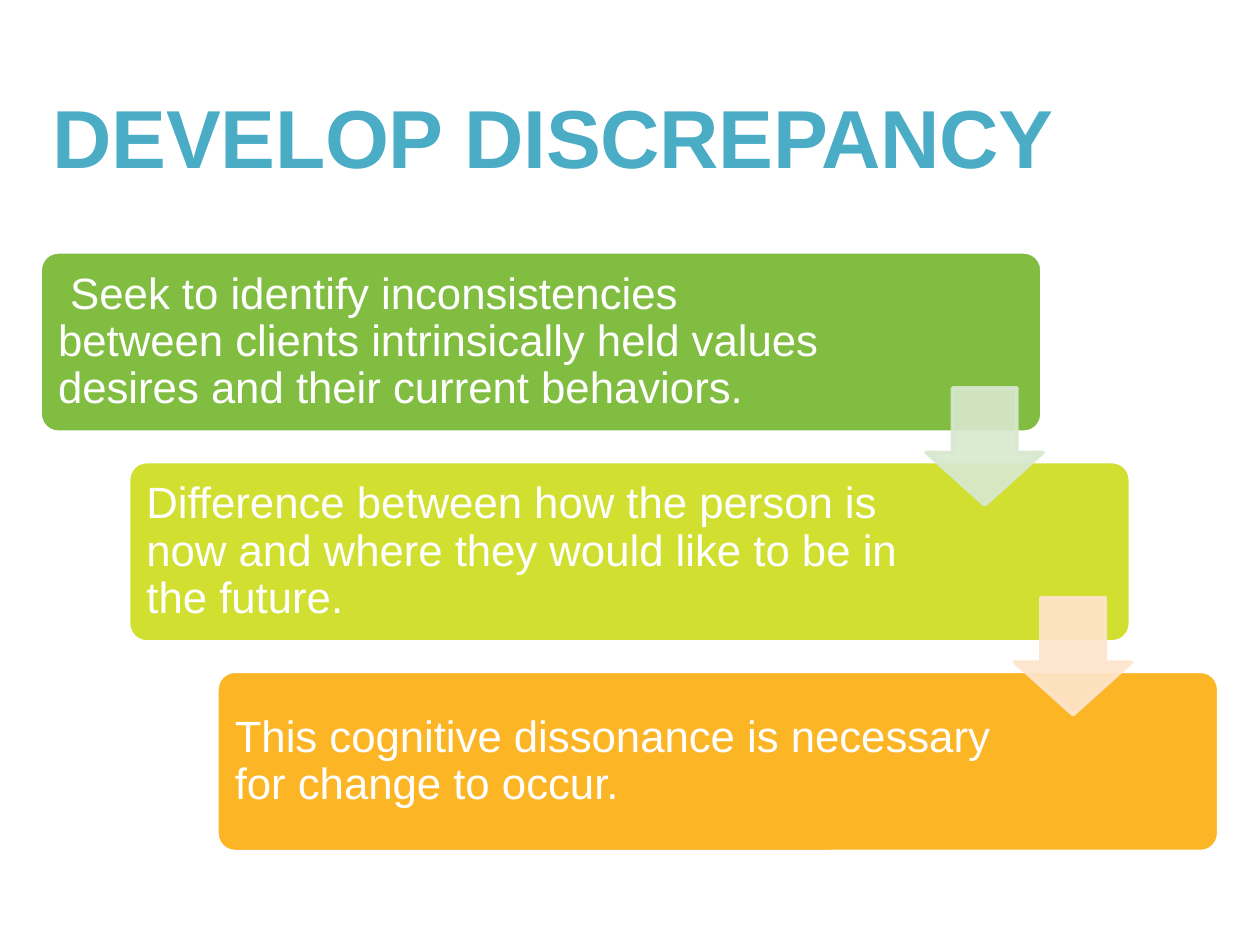
from lxml import etree
from pptx import Presentation
from pptx.dml.color import RGBColor
from pptx.enum.shapes import MSO_SHAPE
from pptx.enum.text import MSO_ANCHOR
from pptx.oxml.ns import qn
from pptx.util import Pt

ROUNDED_RECTANGLE = MSO_SHAPE.ROUNDED_RECTANGLE
DOWN_ARROW = MSO_SHAPE.DOWN_ARROW
MIDDLE = MSO_ANCHOR.MIDDLE

WHITE = RGBColor(0xFF, 0xFF, 0xFF)
TITLE_BLUE = RGBColor(0x4B, 0xAC, 0xC6)
GREEN = RGBColor(0x81, 0xBD, 0x41)
LIME = RGBColor(0xD1, 0xDF, 0x31)
ORANGE = RGBColor(0xFC, 0xB5, 0x25)
PALE_GREEN = RGBColor(0xD8, 0xE8, 0xCF)
PALE_ORANGE = RGBColor(0xFE, 0xE5, 0xCD)

FONT = "Arial"
STEP_X, STEP_Y = 50.5, 119.8
BOX_LEFT, BOX_TOP, BOX_WIDTH, BOX_HEIGHT = 23, 144, 572.4, 103
TEXT_INSET = 3.1
ARROW_LEFT, ARROW_TOP, ARROW_SIZE = 529.2, 221.7, 67

STEPS = [
    (" Seek to identify inconsistencies between clients intrinsically held "
     "values desires and their current behaviors.", GREEN, 461.5),
    ("Difference between how the person is now and where they would like "
     "to be in the future.", LIME, 449.3),
    ("This cognitive dissonance is necessary for change to occur.",
     ORANGE, 449.3),
]
ARROW_COLORS = [PALE_GREEN, PALE_ORANGE]


def add_text(slide, text, left, top, width, height, size, color):
    box = slide.shapes.add_textbox(Pt(left), Pt(top), Pt(width), Pt(height))
    text_frame = box.text_frame
    text_frame.word_wrap = True
    text_frame.vertical_anchor = MIDDLE
    text_frame.text = text
    font = text_frame.paragraphs[0].runs[0].font
    font.name = FONT
    font.size = Pt(size)
    font.color.rgb = color
    return text_frame


def add_block(slide, kind, left, top, width, height, fill, line):
    shape = slide.shapes.add_shape(
        kind, Pt(left), Pt(top), Pt(width), Pt(height))
    shape.shadow.inherit = False
    shape.fill.solid()
    shape.fill.fore_color.rgb = fill
    shape.line.color.rgb = line
    shape.line.width = Pt(2)
    return shape


def add_title(slide, text):
    text_frame = add_text(slide, text, 23, 25.2, 674, 104.4, 47, TITLE_BLUE)
    run = text_frame.paragraphs[0].runs[0]
    run.font.bold = True
    run._r.get_or_add_rPr().set("spc", "-20")


def add_step(slide, index, text, color, text_width):
    left = BOX_LEFT + index * STEP_X
    top = BOX_TOP + index * STEP_Y
    box = add_block(slide, ROUNDED_RECTANGLE, left, top,
                    BOX_WIDTH, BOX_HEIGHT, color, WHITE)
    box.adjustments[0] = 0.1
    text_frame = add_text(slide, text, left + TEXT_INSET, top + TEXT_INSET,
                          text_width, BOX_HEIGHT - 2 * TEXT_INSET, 25, WHITE)
    text_frame.margin_top = text_frame.margin_bottom = Pt(7.2)
    text_frame.paragraphs[0].line_spacing = 0.9


def add_arrow(slide, index, color):
    arrow = add_block(slide, DOWN_ARROW, ARROW_LEFT + index * STEP_X,
                      ARROW_TOP + index * STEP_Y, ARROW_SIZE, ARROW_SIZE,
                      color, color)
    arrow.adjustments[0] = 0.55
    arrow.adjustments[1] = 0.45
    for color_element in arrow._element.spPr.iter(qn("a:srgbClr")):
        etree.SubElement(color_element, qn("a:alpha"), val="90000")


def main():
    presentation = Presentation()
    presentation.slide_width = Pt(720)
    presentation.slide_height = Pt(540)
    slide = presentation.slides.add_slide(presentation.slide_layouts[6])
    add_title(slide, "DEVELOP DISCREPANCY")
    for index, (text, color, text_width) in enumerate(STEPS):
        add_step(slide, index, text, color, text_width)
    for index, color in enumerate(ARROW_COLORS):
        add_arrow(slide, index, color)
    presentation.save("out.pptx")


if __name__ == "__main__":
    main()
